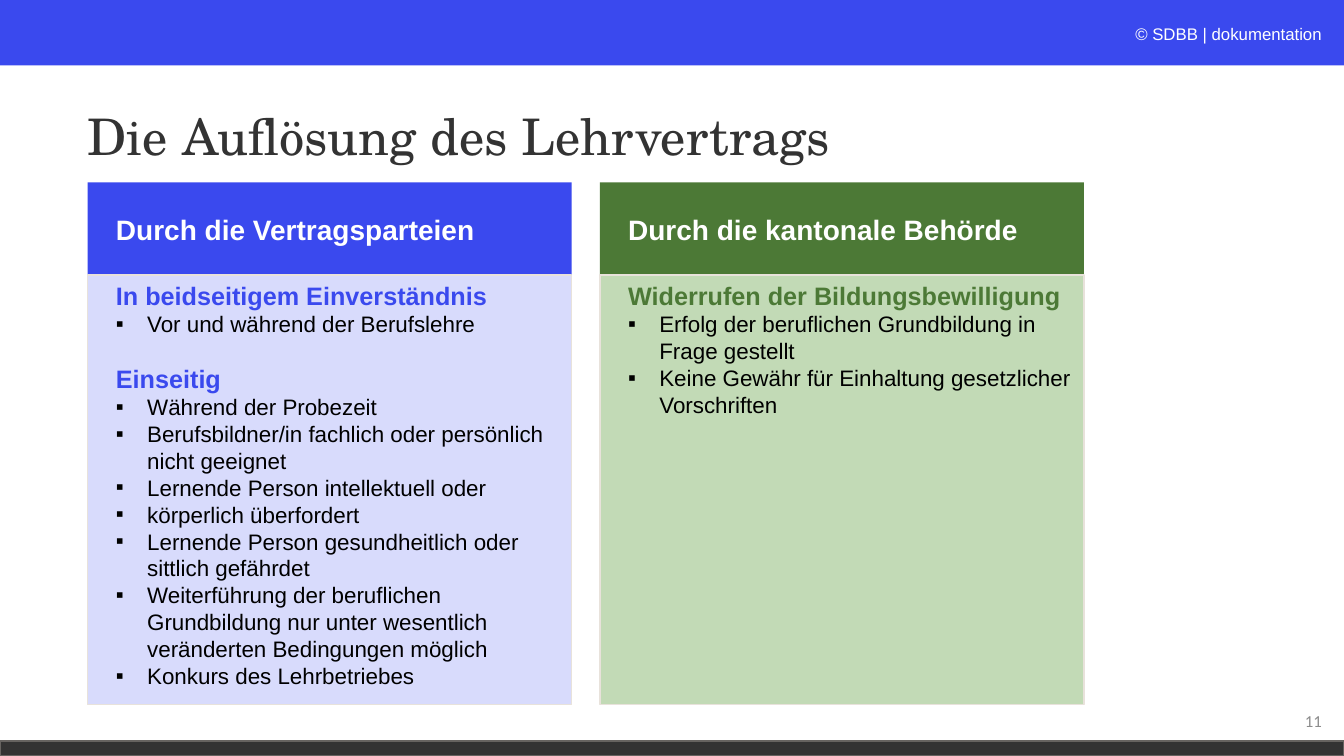
"""Build the slide on how an apprenticeship contract is dissolved."""
from lxml import etree
from pptx import Presentation, util as u
from pptx.dml.color import RGBColor
from pptx.enum import shapes, text
from pptx.oxml.ns import qn


def rgb(value):
    return RGBColor.from_string(value)


def write(p, content, size, color, font="Arial", bold=False, italic=False,
          align=text.PP_ALIGN.LEFT, before=0, spacing=1.0, bullet=None):
    p.alignment, p.line_spacing, p.space_before = align, spacing, u.Pt(before)
    pPr = p._p.get_or_add_pPr()
    indent = u.Inches(0.31) if bullet else 0
    pPr.set("marL", str(indent))
    pPr.set("indent", str(-indent))
    for old in pPr.findall(qn("a:buNone")):
        pPr.remove(old)
    if bullet:
        etree.SubElement(pPr, qn("a:buFont"), typeface="Arial")
        etree.SubElement(pPr, qn("a:buChar"), char=bullet)
    else:
        etree.SubElement(pPr, qn("a:buNone"))
    r = p.add_run()
    r.text = content
    r.font.size, r.font.name = u.Pt(size), font
    r.font.bold, r.font.italic = bold, italic
    r.font.color.rgb = rgb(color)


prs = Presentation()
prs.slide_width, prs.slide_height = u.Inches(13.33), u.Inches(7.5)
s = prs.slides.add_slide(prs.slide_layouts[4])
ph = {sp.placeholder_format.idx: sp for sp in s.placeholders}

for top, height, fill, line in [(0, 0.65, "3A49EE", None), (7.35, 0.15, "333333", "666360")]:
    sp = s.shapes.add_shape(shapes.MSO_SHAPE.RECTANGLE, 0, u.Inches(top),
                            prs.slide_width, u.Inches(height))
    sp.shadow.inherit = False
    sp.fill.solid()
    sp.fill.fore_color.rgb = rgb(fill)
    if line:
        sp.line.color.rgb = rgb(line)
        sp.line.width = u.Pt(1)
    else:
        sp.line.fill.background()

for content, left, top, width, height, font, color in [
    ("© SDBB | dokumentation", 8.62, 0.19, 4.59, 0.3, "Arial", "FFFFFF"),
    ("11", 10.21, 6.95, 3, 0.4, "Calibri", "8C8C8C"),
]:
    sp = s.shapes.add_textbox(u.Inches(left), u.Inches(top), u.Inches(width), u.Inches(height))
    tf = sp.text_frame
    tf.word_wrap = True
    tf.vertical_anchor = text.MSO_ANCHOR.MIDDLE
    write(tf.paragraphs[0], content, 12, color, font=font, align=text.PP_ALIGN.RIGHT)

title = ph[0]
title.left, title.top = u.Inches(0.77), u.Inches(0.66)
title.width, title.height = u.Inches(8.82), u.Inches(1.45)
title.text_frame.auto_size = text.MSO_AUTO_SIZE.NONE
title.text_frame.vertical_anchor = text.MSO_ANCHOR.MIDDLE
write(title.text_frame.paragraphs[0], "Die Auflösung des Lehrvertrags", 36, "333333",
      font="TeX Gyre Schola", spacing=0.9)

columns = [
    ("Durch die Vertragsparteien", "3A49EE", "D8DBFC", [
        ("In beidseitigem Einverständnis", ["Vor und während der Berufslehre"]),
        ("Einseitig", [
            "Während der Probezeit",
            "Berufsbildner/in fachlich oder persönlich nicht geeignet",
            "Lernende Person intellektuell oder",
            "körperlich überfordert",
            "Lernende Person gesundheitlich oder sittlich gefährdet",
            "Weiterführung der beruflichen Grundbildung nur unter wesentlich "
            "veränderten Bedingungen möglich",
            "Konkurs des Lehrbetriebes",
        ]),
    ]),
    ("Durch die kantonale Behörde", "4C7936", "C2DAB6", [
        ("Widerrufen der Bildungsbewilligung", [
            "Erfolg der beruflichen Grundbildung in Frage gestellt",
            "Keine Gewähr für Einhaltung gesetzlicher Vorschriften",
        ]),
    ]),
]

for col, (heading, dark, light, groups) in enumerate(columns):
    head, body = ph[2 * col + 1], ph[2 * col + 2]
    for sp, top, height, fill, anchor in [
        (head, 1.81, 0.92, dark, text.MSO_ANCHOR.MIDDLE),
        (body, 2.73, 4.26, light, text.MSO_ANCHOR.TOP),
    ]:
        sp.left, sp.top = u.Inches(0.87 + 5.08 * col), u.Inches(top)
        sp.width, sp.height = u.Inches(4.8), u.Inches(height)
        sp.fill.solid()
        sp.fill.fore_color.rgb = rgb(fill)
        tf = sp.text_frame
        tf.auto_size = text.MSO_AUTO_SIZE.NONE
        tf.vertical_anchor = anchor
        tf.margin_left, tf.margin_right = u.Inches(0.28), u.Inches(0.1)
        tf.margin_top = tf.margin_bottom = u.Inches(0.05)
    body.line.color.rgb = rgb("E8E2DB")
    body.line.width = u.Pt(1)

    write(head.text_frame.paragraphs[0], heading, 20, "FFFFFF", bold=True)
    tf = body.text_frame
    for i, (subheading, points) in enumerate(groups):
        p = tf.add_paragraph() if i else tf.paragraphs[0]
        write(p, subheading, 18, dark, bold=True, before=18.4 if i else 0)
        for point in points:
            write(tf.add_paragraph(), point, 16, "000000", bullet="▪")

prs.save("out.pptx")
